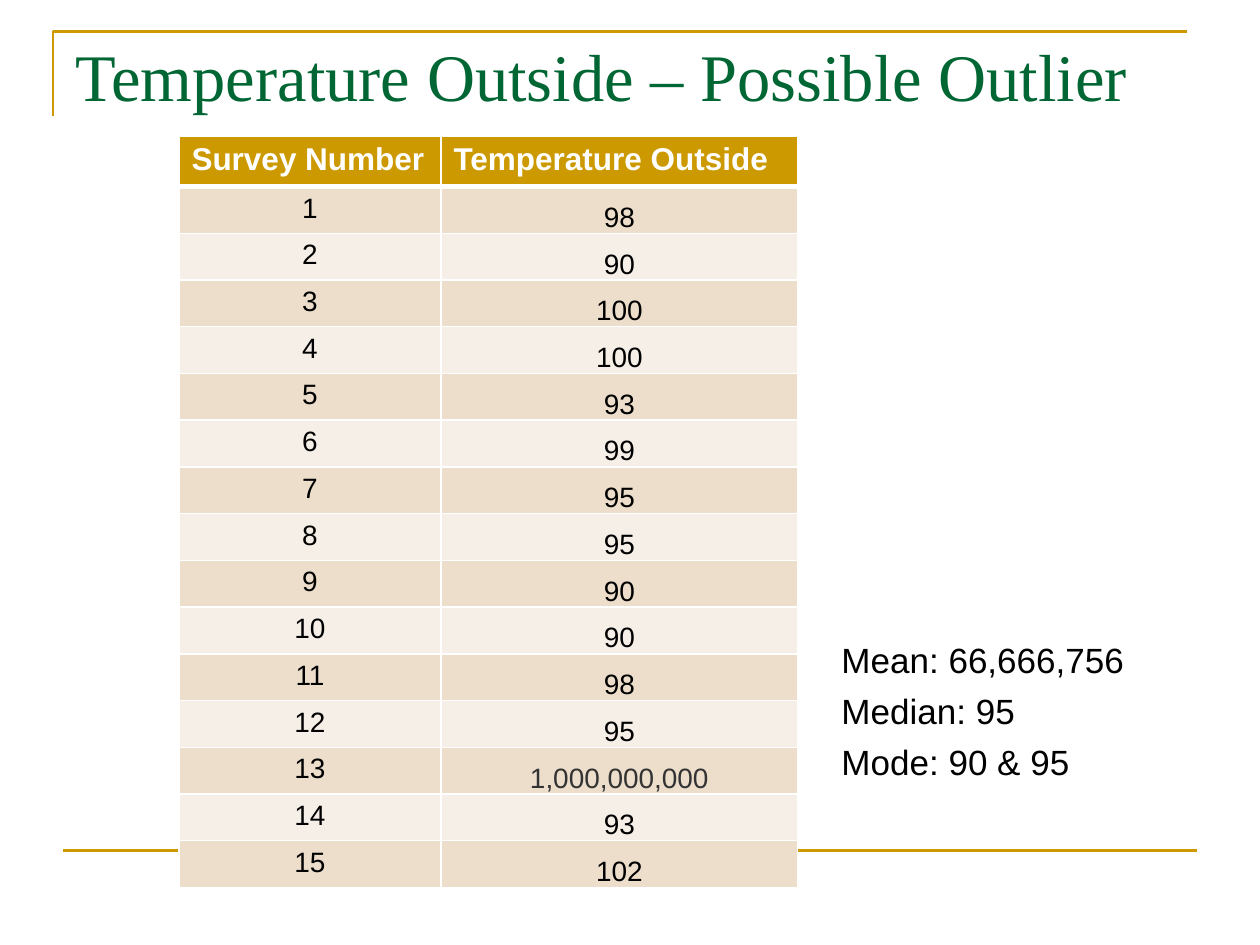
from lxml.etree import SubElement
from pptx import Presentation
from pptx.dml.color import RGBColor
from pptx.enum.shapes import MSO_CONNECTOR
from pptx.enum.text import MSO_ANCHOR, PP_ALIGN
from pptx.oxml.ns import qn
from pptx.util import Inches, Pt

COLORS = {
    "gold": "CC9900", "green": "006633", "white": "FFFFFF", "black": "000000",
    "gray": "333333", "dark_band": "ECDECB", "light_band": "F6EFE7",
}
HEADERS = ["Survey Number", "Temperature Outside"]
TEMPERATURES = ["98", "90", "100", "100", "93", "99", "95", "95", "90", "90",
                "98", "95", "1,000,000,000", "93", "102"]
OUTLIER = "1,000,000,000"
STATISTICS = ["Mean: 66,666,756", "Median: 95", "Mode: 90 & 95"]


def color(name):
    return RGBColor.from_string(COLORS[name])


def format_text(text_frame, size, color_name, font="Arial", bold=False, align=PP_ALIGN.LEFT):
    for paragraph in text_frame.paragraphs:
        paragraph.alignment = align
        for run in paragraph.runs:
            run.font.name = font
            run.font.size = Pt(size)
            run.font.bold = bold
            run.font.color.rgb = color(color_name)


def add_frame(slide, left, top, width, height):
    """Corner line around the title and a rule near the foot of the slide."""
    builder = slide.shapes.build_freeform(left, top + height)
    builder.add_line_segments([(left, top), (left + width, top)], close=False)
    corner = builder.convert_to_shape()
    corner.shadow.inherit = False
    corner.fill.background()
    rule_left, rule_top = left + Inches(0.08), top + Inches(6.5)
    rule = slide.shapes.add_connector(
        MSO_CONNECTOR.STRAIGHT, rule_left, rule_top, rule_left + width, rule_top)
    SubElement(rule.element.spPr, qn("a:effectLst"))
    for shape in (corner, rule):
        shape.line.color.rgb = color("gold")
        shape.line.width = Pt(1.5)


def add_title(slide, left, top, width, height):
    text_frame = slide.shapes.add_textbox(left, top, width, height).text_frame
    text_frame.word_wrap = True
    text_frame.margin_top = Inches(0.11)
    text_frame.text = "Temperature Outside – Possible Outlier"
    format_text(text_frame, 38, "green", font="Times New Roman")


def add_statistics(slide, left, top, width, height):
    text_frame = slide.shapes.add_textbox(left, top, width, height).text_frame
    text_frame.word_wrap = True
    text_frame.vertical_anchor = MSO_ANCHOR.BOTTOM
    text_frame.margin_bottom = Inches(0.37)
    text_frame.text = "\n".join(STATISTICS)
    format_text(text_frame, 20, "black")
    for paragraph in text_frame.paragraphs:
        paragraph.space_before = Pt(5)


def style_cell(cell, fill_name, top_width=1, bottom_width=1):
    """Fill the cell and give it white borders; borders must precede the fill."""
    properties = cell._tc.get_or_add_tcPr()
    widths = {"a:lnL": 1, "a:lnR": 1, "a:lnT": top_width, "a:lnB": bottom_width}
    for tag, width in widths.items():
        line = SubElement(properties, qn(tag), w=str(Pt(width)))
        fill = SubElement(line, qn("a:solidFill"))
        SubElement(fill, qn("a:srgbClr"), val=COLORS["white"])
    cell.fill.solid()
    cell.fill.fore_color.rgb = color(fill_name)


def add_survey_table(slide, left, top, width, height):
    table = slide.shapes.add_table(
        len(TEMPERATURES) + 1, len(HEADERS), left, top, width, height).table
    table.columns[0].width = Inches(2.08)
    table.columns[1].width = width - Inches(2.08)
    for column, header in enumerate(HEADERS):
        cell = table.cell(0, column)
        cell.text = header
        format_text(cell.text_frame, 18, "white", bold=True)
        style_cell(cell, "gold", bottom_width=3)
    for row, temperature in enumerate(TEMPERATURES, start=1):
        band = "dark_band" if row % 2 else "light_band"
        for column, value in enumerate([str(row), temperature]):
            cell = table.cell(row, column)
            cell.text = value
            text_color = "gray" if value == OUTLIER else "black"
            format_text(cell.text_frame, 16, text_color, align=PP_ALIGN.CENTER)
            style_cell(cell, band, top_width=3 if row == 1 else 1)
        cell.vertical_anchor = MSO_ANCHOR.BOTTOM
        cell.margin_left = cell.margin_right = cell.margin_top = Inches(0.01)
        cell.margin_bottom = 0


def main():
    presentation = Presentation()
    presentation.slide_width = Inches(10)
    presentation.slide_height = Inches(7.5)
    slide = presentation.slides.add_slide(presentation.slide_layouts[6])
    add_frame(slide, Inches(0.42), Inches(0.25), Inches(9), Inches(0.67))
    add_statistics(slide, Inches(6.58), Inches(1.08), Inches(2.71), Inches(5.5))
    add_title(slide, Inches(0.5), Inches(0.17), Inches(9), Inches(1.25))
    add_survey_table(slide, Inches(1.42), Inches(1.08), Inches(4.91), Inches(5.94))
    presentation.save("out.pptx")


if __name__ == "__main__":
    main()
